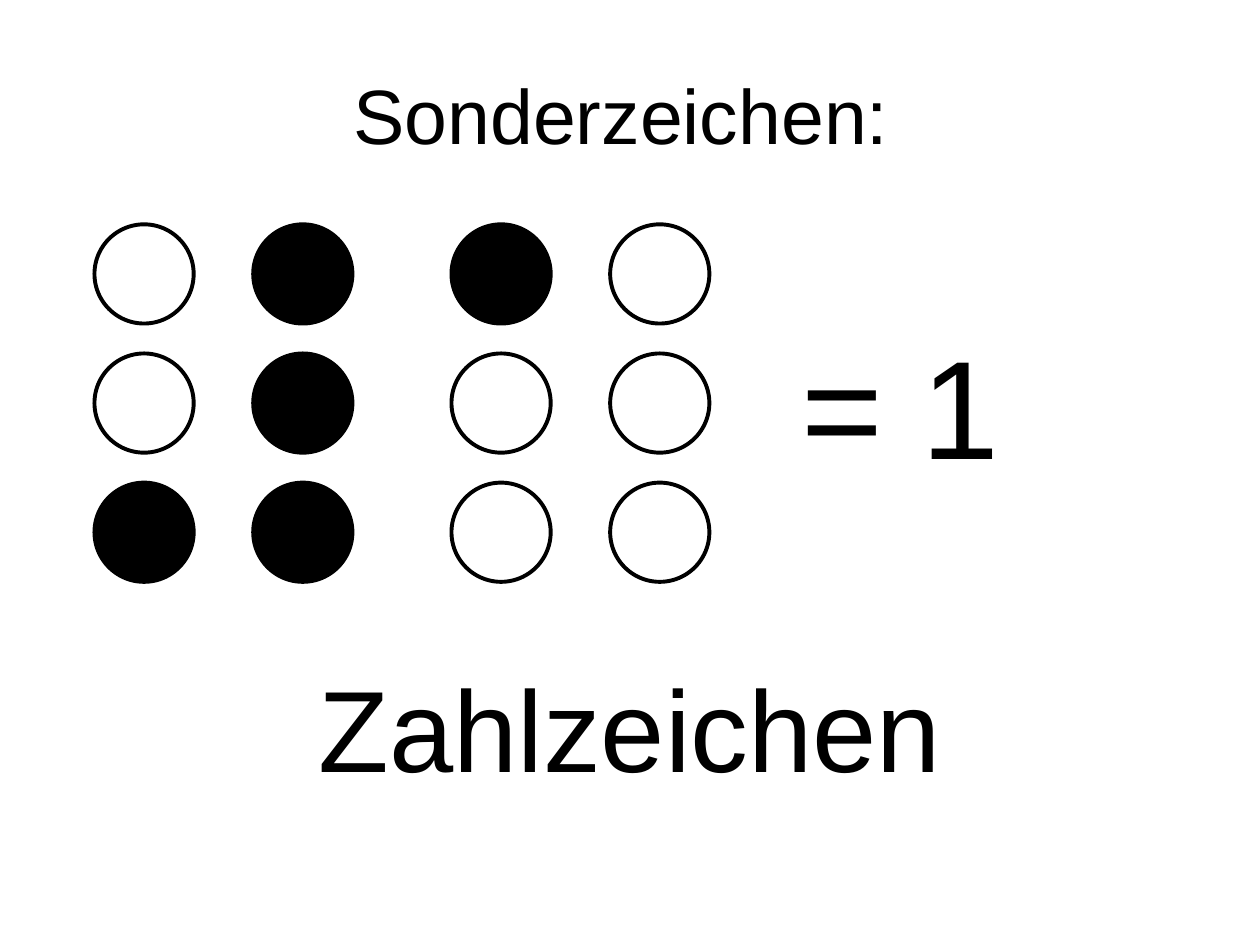
from dataclasses import dataclass

from pptx import Presentation
from pptx.dml.color import RGBColor
from pptx.enum.shapes import MSO_SHAPE as Shape
from pptx.enum.text import MSO_ANCHOR as Anchor, MSO_AUTO_SIZE as AutoSize, PP_ALIGN as Align
from pptx.util import Pt


@dataclass(frozen=True)
class Theme:
    font: str = "Arial"
    ink: RGBColor = RGBColor(0, 0, 0)
    title_size: float = 44
    caption_size: float = 66
    result_size: float = 80
    outline: float = 2.25


class SlideBuilder:
    def __init__(self, slide, theme):
        self.slide = slide
        self.theme = theme

    def text(self, content, box, size, align=Align.CENTER, anchor=Anchor.TOP, wrap=True):
        shape = self.slide.shapes.add_textbox(*map(Pt, box))
        frame = shape.text_frame
        frame.word_wrap = wrap
        frame.auto_size = AutoSize.NONE
        frame.vertical_anchor = anchor
        paragraph = frame.paragraphs[0]
        paragraph.text = content
        paragraph.alignment = align
        paragraph.font.name = self.theme.font
        paragraph.font.size = Pt(size)
        paragraph.font.color.rgb = self.theme.ink

    def dot(self, left, top, diameter, raised):
        shape = self.slide.shapes.add_shape(
            Shape.OVAL, Pt(left), Pt(top), Pt(diameter), Pt(diameter))
        shape.shadow.inherit = False
        shape.line.color.rgb = self.theme.ink
        shape.line.width = Pt(self.theme.outline)
        if raised:
            shape.fill.solid()
            shape.fill.fore_color.rgb = self.theme.ink
        else:
            shape.fill.background()

    def braille_cell(self, left, top, raised_dots):
        diameter, column_pitch, row_pitch = 56.7, 90.7, 73.8
        for index in range(6):
            column, row = divmod(index, 3)
            self.dot(left + column * column_pitch, top + row * row_pitch,
                     diameter, index + 1 in raised_dots)


def main():
    presentation = Presentation()
    presentation.slide_width, presentation.slide_height = Pt(720), Pt(540)
    slide = presentation.slides.add_slide(presentation.slide_layouts[6])
    theme = Theme()
    builder = SlideBuilder(slide, theme)

    builder.text("Sonderzeichen:", (31, 20, 648, 90), theme.title_size, anchor=Anchor.MIDDLE)
    builder.text("Zahlzeichen", (0, 372, 720, 86.4), theme.caption_size)

    number_sign, letter_a = {3, 4, 5, 6}, {1}
    for position, raised_dots in enumerate((number_sign, letter_a)):
        builder.braille_cell(54 + position * 204, 128.2, raised_dots)

    builder.text("= 1", (450.7, 179.3, 128.2, 103), theme.result_size,
                 align=Align.LEFT, wrap=False)
    presentation.save("out.pptx")


if __name__ == "__main__":
    main()
